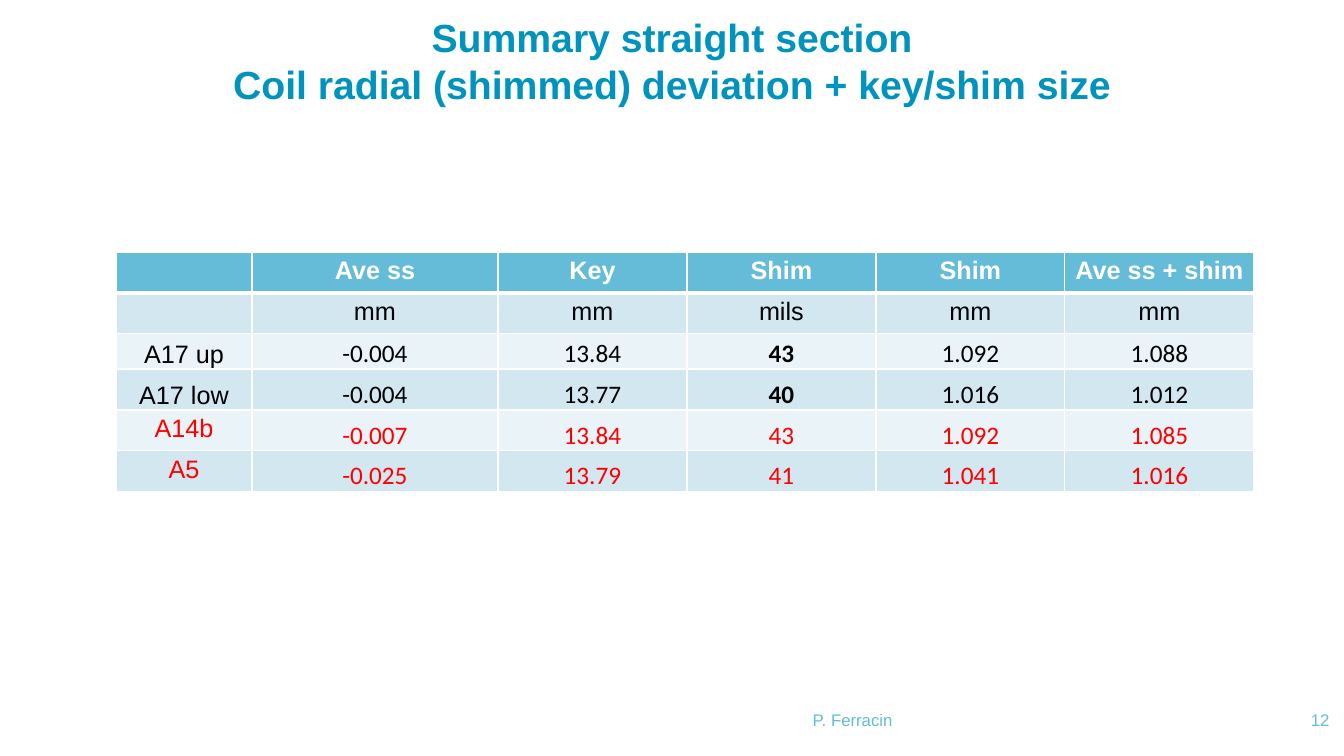
"""Build the slide summarising straight section coil deviation and shim size."""
import pptx
import pptx.dml.color
import pptx.enum.text
import pptx.oxml
import pptx.oxml.ns
import pptx.util

Pt = pptx.util.Pt
ALIGN = pptx.enum.text.PP_ALIGN
ANCHOR = pptx.enum.text.MSO_ANCHOR


def color(value):
    return pptx.dml.color.RGBColor.from_string(value)


def style(paragraph, size, hue, bold=False, face="Arial", align=ALIGN.CENTER):
    paragraph.alignment = align
    for run in paragraph.runs:
        run.font.size = Pt(size)
        run.font.name = face
        run.font.bold = bold
        run.font.color.rgb = color(hue)


deck = pptx.Presentation()
deck.slide_width, deck.slide_height = Pt(960), Pt(540)
slide = deck.slides.add_slide(deck.slide_layouts[5])

title = slide.shapes.title
title.left, title.top, title.width, title.height = Pt(64), Pt(14.4), Pt(832), Pt(57)
heading = title.text_frame
heading.text = "Summary straight section\vCoil radial (shimmed) deviation + key/shim size"
heading.vertical_anchor = ANCHOR.MIDDLE
heading.auto_size = pptx.enum.text.MSO_AUTO_SIZE.NONE
style(heading.paragraphs[0], 28, "0093BE", bold=True)

author = slide.shapes.add_textbox(Pt(322.6), Pt(493.2), Pt(573), Pt(28))
page = slide.shapes.add_textbox(Pt(912.2), Pt(493.2), Pt(37.5), Pt(28))
for footer, words, align in ((author, "P. Ferracin", ALIGN.CENTER), (page, "12", ALIGN.RIGHT)):
    footer.text_frame.text = words
    footer.text_frame.word_wrap = True
    footer.text_frame.vertical_anchor = ANCHOR.BOTTOM
    style(footer.text_frame.paragraphs[0], 12, "64BCD9", align=align)

for frame in (heading, author.text_frame, page.text_frame):
    frame.margin_left = frame.margin_top = frame.margin_right = frame.margin_bottom = 0

measurements = [
    ["", "Ave ss", "Key", "Shim", "Shim", "Ave ss + shim"],
    ["", "mm", "mm", "mils", "mm", "mm"],
    ["A17 up", "-0.004", "13.84", "43", "1.092", "1.088"],
    ["A17 low", "-0.004", "13.77", "40", "1.016", "1.012"],
    ["A14b", "-0.007", "13.84", "43", "1.092", "1.085"],
    ["A5", "-0.025", "13.79", "41", "1.041", "1.016"],
]
column_widths = [97.2, 175.7] + [135] * 4
row_heights = [29.2, 29.2, 25.2, 29.2, 29.2, 29.2]
row_fills = ["64BCD9"] + ["D3E7F1", "EAF3F8"] * 2 + ["D3E7F1"]
row_inks = ["FFFFFF"] + ["000000"] * 3 + ["FF0000"] * 2

summary = slide.shapes.add_table(
    len(measurements), len(column_widths), Pt(82.8), Pt(180),
    Pt(sum(column_widths)), Pt(sum(row_heights))).table
for column, width in zip(summary.columns, column_widths):
    column.width = Pt(width)
for row, height in zip(summary.rows, row_heights):
    row.height = Pt(height)

for r, values in enumerate(measurements):
    for c, value in enumerate(values):
        cell = summary.cell(r, c)
        cell.text = value
        is_number = r > 1 and c > 0
        bold = r == 0 or (r in (2, 3) and c == 3)
        style(cell.text_frame.paragraphs[0], 18, row_inks[r], bold,
              "Calibri" if is_number else "Arial")
        if is_number or r in (2, 3):
            cell.vertical_anchor = ANCHOR.BOTTOM
            cell.margin_left = cell.margin_top = cell.margin_right = Pt(0.7)
            cell.margin_bottom = 0
        for side in "LRTB":
            under_header = (r, side) in ((0, "B"), (1, "T"))
            cell._tc.get_or_add_tcPr().append(pptx.oxml.parse_xml(
                f'<a:ln{side} {pptx.oxml.ns.nsdecls("a")} w="{Pt(3 if under_header else 1)}">'
                '<a:solidFill><a:srgbClr val="FFFFFF"/></a:solidFill>'
                f'</a:ln{side}>'))
        cell.fill.solid()
        cell.fill.fore_color.rgb = color(row_fills[r])

deck.save("out.pptx")
